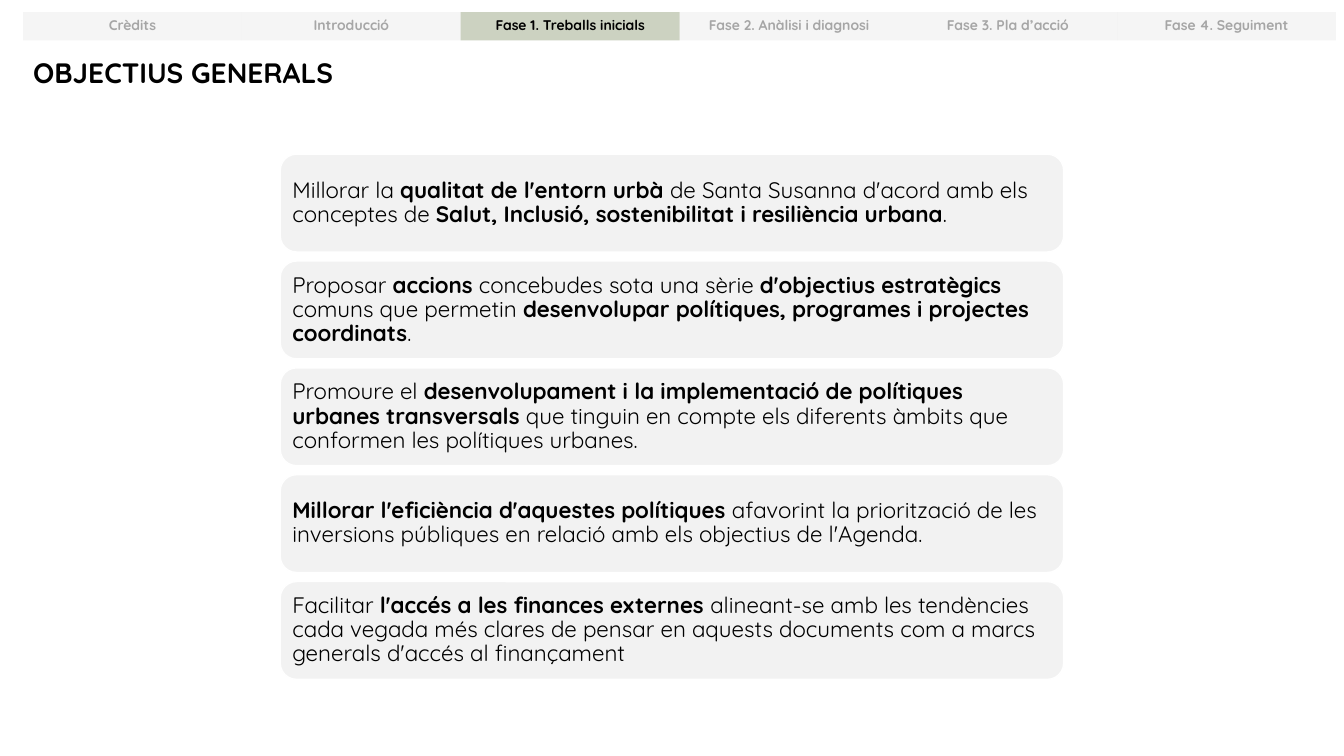
from lxml import etree
from pptx import Presentation
from pptx.dml.color import RGBColor
from pptx.enum.shapes import MSO_SHAPE
from pptx.enum.text import MSO_ANCHOR, MSO_AUTO_SIZE, PP_ALIGN
from pptx.oxml.ns import qn
from pptx.util import Inches, Pt

RECT, ROUNDED = MSO_SHAPE.RECTANGLE, MSO_SHAPE.ROUNDED_RECTANGLE
MIDDLE, CENTER, LEFT = MSO_ANCHOR.MIDDLE, PP_ALIGN.CENTER, PP_ALIGN.LEFT
GROW = MSO_AUTO_SIZE.SHAPE_TO_FIT_TEXT

TABS = ["Crèdits", "Introducció", "Fase 1. Treballs inicials",
        "Fase 2. Anàlisi i diagnosi", "Fase 3. Pla d’acció", "Fase 4. Seguiment"]
ACTIVE_TAB = 2
TAB_LEFT, TAB_TOP, TAB_W, TAB_H = 0.23, 0.12, 2.17, 0.28

# Bold passages stand between asterisks
GOALS = [
    "Millorar la *qualitat de l'entorn urbà *de Santa Susanna d'acord amb els "
    "conceptes de *Salut, Inclusió, sostenibilitat i resiliència urbana*.",
    "Proposar *accions* concebudes sota una sèrie *d'objectius estratègics* comuns "
    "que permetin *desenvolupar polítiques, programes i projectes coordinats*.",
    "Promoure el *desenvolupament i la implementació de polítiques urbanes "
    "transversals *que tinguin en compte els diferents àmbits que conformen les "
    "polítiques urbanes.",
    "*Millorar l'eficiència d'aquestes polítiques *afavorint la priorització de les "
    "inversions públiques en relació amb els objectius de l'Agenda.",
    "Facilitar *l'accés a les finances externes *alineant-se amb les tendències cada "
    "vegada més clares de pensar en aquests documents com a marcs generals d'accés "
    "al finançament",
]
GOAL_LEFT, GOAL_TOP, GOAL_W, GOAL_H, GOAL_STEP = 2.78, 1.53, 7.77, 0.97, 1.06
GOAL_PAD = 0.05


def rgb(value):
    return RGBColor.from_string(value)


def set_all(obj, values):
    for name, value in values.items():
        setattr(obj, name, value)


class Deck:
    font = "Quicksand"

    def __init__(self):
        self.prs = Presentation()
        set_all(self.prs, {"slide_width": Inches(13.33), "slide_height": Inches(7.5)})
        self.s = self.prs.slides.add_slide(self.prs.slide_layouts[6])

    def shape(self, kind, box, fill, alpha=None, line=None):
        """Add a filled shape; alpha is the opacity in percent."""
        sp = self.s.shapes.add_shape(kind, *map(Inches, box))
        sp.shadow.inherit = False
        sp.fill.solid()
        sp.fill.fore_color.rgb = rgb(fill)
        if alpha is not None:
            clr = sp.element.spPr.find(qn("a:solidFill"))[0]
            etree.SubElement(clr, qn("a:alpha")).set("val", str(alpha * 1000))
        if line:
            sp.line.color.rgb = rgb(line)
            sp.line.width = Pt(1)
        else:
            sp.line.fill.background()
        return sp

    def textbox(self, box):
        return self.s.shapes.add_textbox(*map(Inches, box))

    def add_text(self, sp, text, size, color="000000", frame=None, para=None):
        """Fill a shape with one paragraph, bold between asterisks."""
        tf = sp.text_frame
        set_all(tf, {"word_wrap": True, **(frame or {})})
        p = tf.paragraphs[0]
        set_all(p, {"alignment": LEFT, **(para or {})})
        for i, part in enumerate(text.split("*")):
            if part:
                r = p.add_run()
                r.text = part
                set_all(r.font, {"name": self.font, "size": Pt(size), "bold": i % 2 == 1})
                r.font.color.rgb = rgb(color)

    def tab(self, box, label, active):
        sp = self.shape(RECT, box, "374E0A" if active else "D9D9D9", alpha=25)
        self.add_text(sp, f"*{label}*", 10, "000000" if active else "A6A6A6",
                      {"vertical_anchor": MIDDLE},
                      {"alignment": CENTER, "line_spacing": 0.9, "space_before": Pt(10)})

    def title(self, box, text):
        self.add_text(self.textbox(box), f"*{text}*", 20, frame={"auto_size": GROW})

    def goal(self, box, text):
        self.shape(ROUNDED, box, "F2F2F2", line="FFFFFF")
        x, y, w, h = box
        inner = (x + GOAL_PAD, y + GOAL_PAD, w - 2 * GOAL_PAD, h - 2 * GOAL_PAD)
        sides = ("left", "top", "right", "bottom")
        margins = {f"margin_{side}": Inches(0.07) for side in sides}
        self.add_text(self.textbox(inner), text, 16,
                      frame={"vertical_anchor": MIDDLE, **margins},
                      para={"line_spacing": 0.9, "space_after": Pt(5.6)})


def main():
    deck = Deck()
    for i, label in enumerate(TABS):
        deck.tab((TAB_LEFT + i * TAB_W, TAB_TOP, TAB_W, TAB_H), label, i == ACTIVE_TAB)
    deck.title((0.23, 0.5, 6.28, 0.44), "OBJECTIUS GENERALS")
    for i, text in enumerate(GOALS):
        deck.goal((GOAL_LEFT, GOAL_TOP + i * GOAL_STEP, GOAL_W, GOAL_H), text)
    deck.prs.save("out.pptx")


if __name__ == "__main__":
    main()
